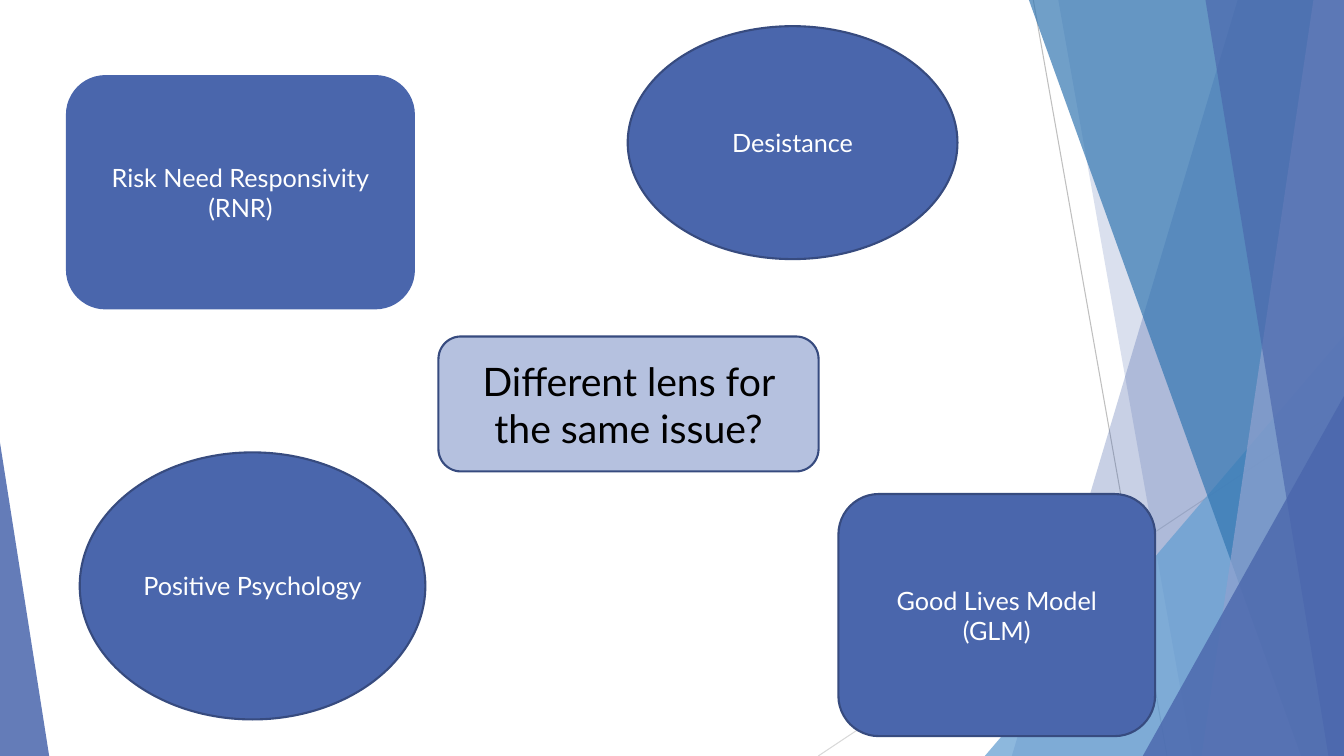
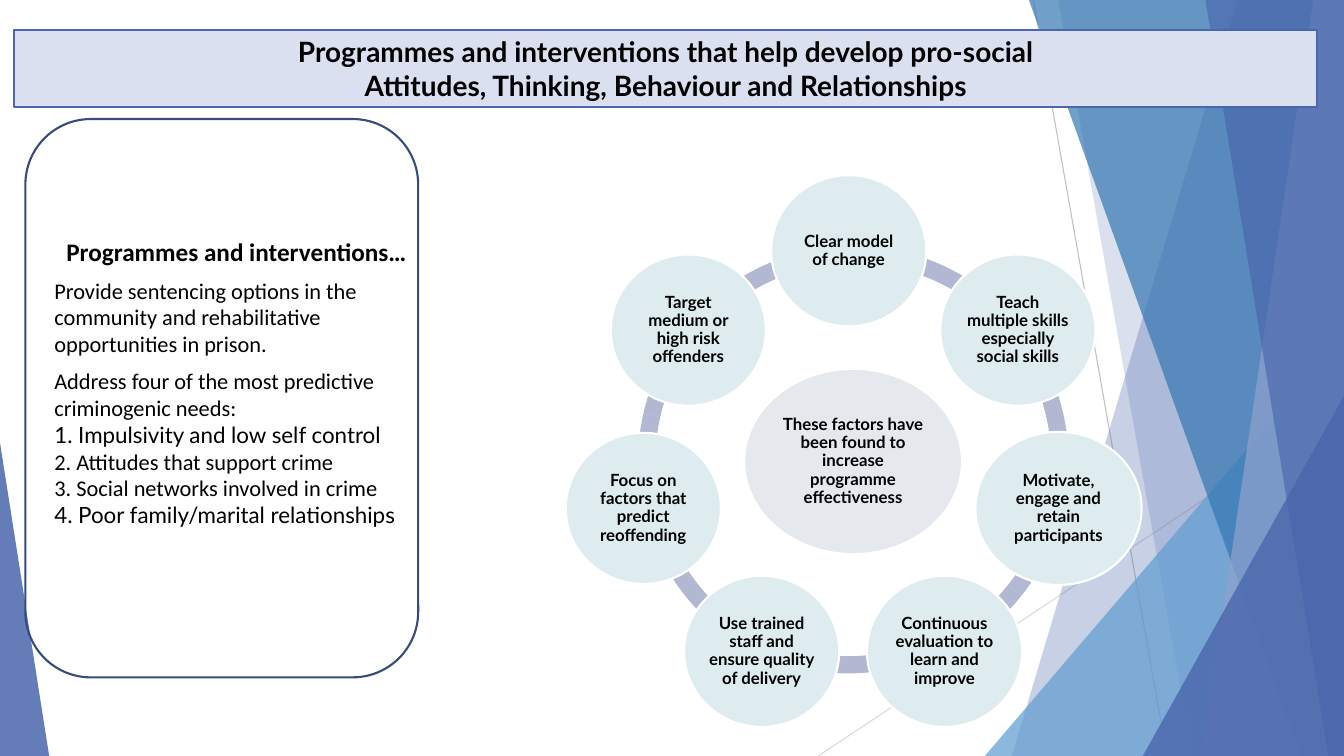
from math import cos, radians, sin

from lxml import etree
from pptx import Presentation
from pptx.dml.color import RGBColor
from pptx.enum.shapes import MSO_CONNECTOR, MSO_SHAPE
from pptx.enum.text import MSO_ANCHOR, PP_ALIGN
from pptx.oxml.ns import qn
from pptx.util import Cm, Pt

STRAIGHT = MSO_CONNECTOR.STRAIGHT
ROUNDED = MSO_SHAPE.ROUNDED_RECTANGLE
RECTANGLE = MSO_SHAPE.RECTANGLE
OVAL = MSO_SHAPE.OVAL
TRIANGLE = MSO_SHAPE.ISOSCELES_TRIANGLE
BLOCK_ARC = MSO_SHAPE.BLOCK_ARC
MIDDLE = MSO_ANCHOR.MIDDLE
CENTER, LEFT = PP_ALIGN.CENTER, PP_ALIGN.LEFT

WIDTH, HEIGHT = 33.87, 19.05
BLUE, NAVY, PALE_BLUE = "4A66AC", "374B7F", "DAE0EF"
WHITE, BLACK = "FFFFFF", "000000"


def paint(shape, fill=None, line=None, line_width=1.5, opacity=100):
    """Set fill and outline (None means none), opacity in percent, no shadow."""
    shape.shadow.inherit = False
    if fill:
        shape.fill.solid()
        shape.fill.fore_color.rgb = RGBColor.from_string(fill)
    else:
        shape.fill.background()
    if opacity < 100:
        colour = shape.element.spPr.find(qn("a:solidFill"))[0]
        etree.SubElement(colour, qn("a:alpha"), val=str(opacity * 1000))
    if line:
        shape.line.color.rgb = RGBColor.from_string(line)
        shape.line.width = Pt(line_width)
    else:
        shape.line.fill.background()


def write(frame, text, size, colour=BLACK, font="Lato", bold=False, align=CENTER):
    """Add one paragraph to a text frame and return it."""
    frame.word_wrap = True
    paragraph = frame.add_paragraph() if frame.text else frame.paragraphs[0]
    paragraph.alignment = align
    run = paragraph.add_run()
    run.text = text
    run.font.size = Pt(size)
    run.font.name = font
    run.font.bold = bold
    run.font.color.rgb = RGBColor.from_string(colour)
    return paragraph


presentation = Presentation()
presentation.slide_width = Cm(WIDTH)
presentation.slide_height = Cm(HEIGHT)
layout = presentation.slide_layouts[6]
for placeholder in list(layout.placeholders):
    placeholder.element.getparent().remove(placeholder.element)

# Shared backdrop: drawn once, then moved into the blank layout
slide = presentation.slides.add_slide(layout)
shapes = slide.shapes

hairlines = [
    (26.04, 0, 29.41, HEIGHT, "BFBFBF"),
    (WIDTH, 10.24, 20.62, HEIGHT, "D9D9D9"),
]
for x1, y1, x2, y2, colour in hairlines:
    hairline = shapes.add_connector(STRAIGHT, Cm(x1), Cm(y1), Cm(x2), Cm(y2))
    hairline.line.color.rgb = RGBColor.from_string(colour)
    hairline.line.width = Pt(0.75)
    etree.SubElement(hairline.element.spPr, qn("a:effectLst"))

# Bands: x at the top and at the bottom. Peaks: left and top.
facets = [
    ("band", 31.19, 25.5, BLUE, 30),
    ("band", 26.67, 30.05, BLUE, 20),
    ("peak", 24.82, 8.46, "629DD1", 72),
    ("band", 25.93, 32.79, "3477B2", 70),
    ("band", 33.1, 30.28, "90A2CF", 70),
    ("band", 30.38, 33.48, BLUE, 65),
    ("peak", 28.8, 9.98, BLUE, 80),
]
for kind, first, second, colour, opacity in facets:
    if kind == "band":
        builder = shapes.build_freeform(Cm(first), 0)
        corners = [(WIDTH, 0), (WIDTH, HEIGHT), (second, HEIGHT)]
        builder.add_line_segments([(Cm(x), Cm(y)) for x, y in corners], close=True)
        facet = builder.convert_to_shape()
    else:
        facet = shapes.add_shape(TRIANGLE, Cm(first), Cm(second),
                                 Cm(WIDTH - first), Cm(HEIGHT - second))
        facet.adjustments[0] = 1
    paint(facet, colour, opacity=opacity)

left_wedge = shapes.add_shape(TRIANGLE, 0, Cm(11.15), Cm(1.24), Cm(HEIGHT - 11.15))
left_wedge.adjustments[0] = 0
paint(left_wedge, BLUE, opacity=85)

for shape in list(shapes):
    layout.shapes.element.append(shape.element)

# Slide 1: four models around one question
models = [
    (ROUNDED, 1.68, 1.91, 8.76, 5.87, BLUE, BLUE, 1, 18, WHITE,
     ["Risk Need Responsivity", "(RNR)"]),
    (ROUNDED, 21.13, 12.45, 7.98, 6.1, BLUE, NAVY, 1.5, 18, WHITE,
     ["Good Lives Model", "(GLM)"]),
    (OVAL, 2.01, 11.4, 8.71, 6.73, BLUE, NAVY, 1.5, 18, WHITE,
     ["Positive Psychology"]),
    (OVAL, 15.82, 0.66, 8.31, 5.87, BLUE, NAVY, 1.5, 18, WHITE,
     ["Desistance"]),
    (ROUNDED, 11.05, 8.48, 9.58, 3.4, "B5C1DF", NAVY, 1.5, 28, BLACK,
     ["Different lens for the same issue?"]),
]
for kind, left, top, width, height, fill, line, line_width, size, colour, lines in models:
    model = shapes.add_shape(kind, Cm(left), Cm(top), Cm(width), Cm(height))
    paint(model, fill, line, line_width)
    model.text_frame.vertical_anchor = MIDDLE
    for text in lines:
        write(model.text_frame, text, size, colour)

# Slide 2: programmes and the factors that make them effective
slide = presentation.slides.add_slide(layout)
shapes = slide.shapes

panel = shapes.add_shape(ROUNDED, Cm(0.64), Cm(3), Cm(9.9), Cm(14.07))
paint(panel, line=NAVY)

programmes = shapes.add_textbox(Cm(1.12), Cm(5.84), Cm(9.68), Cm(8.38)).text_frame
write(programmes, "Programmes and interventions…", 18, font="Calibri", bold=True)
programme_lines = [
    ("Provide sentencing options in the community and rehabilitative "
     "opportunities in prison.", "Calibri", 7),
    ("Address four of the most predictive criminogenic needs:", "Calibri", 7),
    ("1. Impulsivity and low self control", "Lato", 0),
    ("2. Attitudes that support crime", "Calibri", 0),
    ("3. Social networks involved in crime", "Calibri", 0),
    ("4. Poor family/marital relationships", "Lato", 0),
]
for text, font, space_before in programme_lines:
    paragraph = write(programmes, text, 16, font=font, align=LEFT)
    paragraph.space_before = Pt(space_before)

title = shapes.add_shape(RECTANGLE, Cm(0.36), Cm(0.76), Cm(32.84), Cm(1.93))
paint(title, PALE_BLUE, BLUE)
title.text_frame.vertical_anchor = MIDDLE
title.text_frame.margin_top = title.text_frame.margin_bottom = Cm(0.1)
for text in ["Programmes and interventions that help develop pro-social",
             "Attitudes, Thinking, Behaviour and Relationships"]:
    write(title.text_frame, text, 20, bold=True)

# Left, top, start and end angle in degrees, clockwise from the right
ring_arcs = [
    (16.08, 6.2, 131.13, 161.18),
    (15.98, 6.3, 100.84, 132.1),
    (15.95, 6.12, 68.47, 99.67),
    (16.08, 6.2, 38.57, 69.43),
    (16.08, 6.2, 7.71, 38.57),
    (16.08, 6.2, 192.86, 7.71),
    (16.08, 6.2, 161.2, 192.87),
]
for left, top, start, end in ring_arcs:
    arc = shapes.add_shape(BLOCK_ARC, Cm(left), Cm(top), Cm(10.85), Cm(10.85))
    arc.adjustments[0] = start * 0.6  # 60000 units per degree, scaled by 100000
    arc.adjustments[1] = end * 0.6
    arc.adjustments[2] = 0.04
    paint(arc, "B2B8D2")

CENTER_X, CENTER_Y, RADIUS = 21.5, 11.63, 5.31
# Text, horizontal nudge, width, height; clockwise from the top
factors = [
    ("Clear model of change", -0.11, 3.91, 3.81),
    ("Teach multiple skills especially social skills", 0, 3.91, 3.81),
    ("Motivate, engage and retain participants", 0, 4.19, 3.86),
    ("Continuous evaluation to learn and improve", 0, 3.91, 3.81),
    ("Use trained staff and ensure quality of delivery", 0, 3.91, 3.81),
    ("Focus on factors that predict reoffending", -0.11, 3.91, 3.81),
    ("Target medium or high risk offenders", 0, 3.91, 3.81),
]
circles = [("These factors have been found to increase programme effectiveness",
            CENTER_X, CENTER_Y, 5.49, 4.67, "E5E9EE")]
for index, (text, nudge, width, height) in enumerate(factors):
    angle = radians(index * 360 / len(factors) - 90)
    circles.append((text, CENTER_X + RADIUS * cos(angle) + nudge,
                    CENTER_Y + RADIUS * sin(angle), width, height, "DEECEF"))

for text, x, y, width, height, fill in circles:
    circle = shapes.add_shape(OVAL, Cm(x - width / 2), Cm(y - height / 2),
                              Cm(width), Cm(height))
    paint(circle, fill, WHITE)
    frame = circle.text_frame
    frame.vertical_anchor = MIDDLE
    frame.margin_left = frame.margin_right = Cm(0.05)
    frame.margin_top = frame.margin_bottom = Cm(0.05)
    write(frame, text, 12, bold=True).line_spacing = 0.9

presentation.save("out.pptx")
